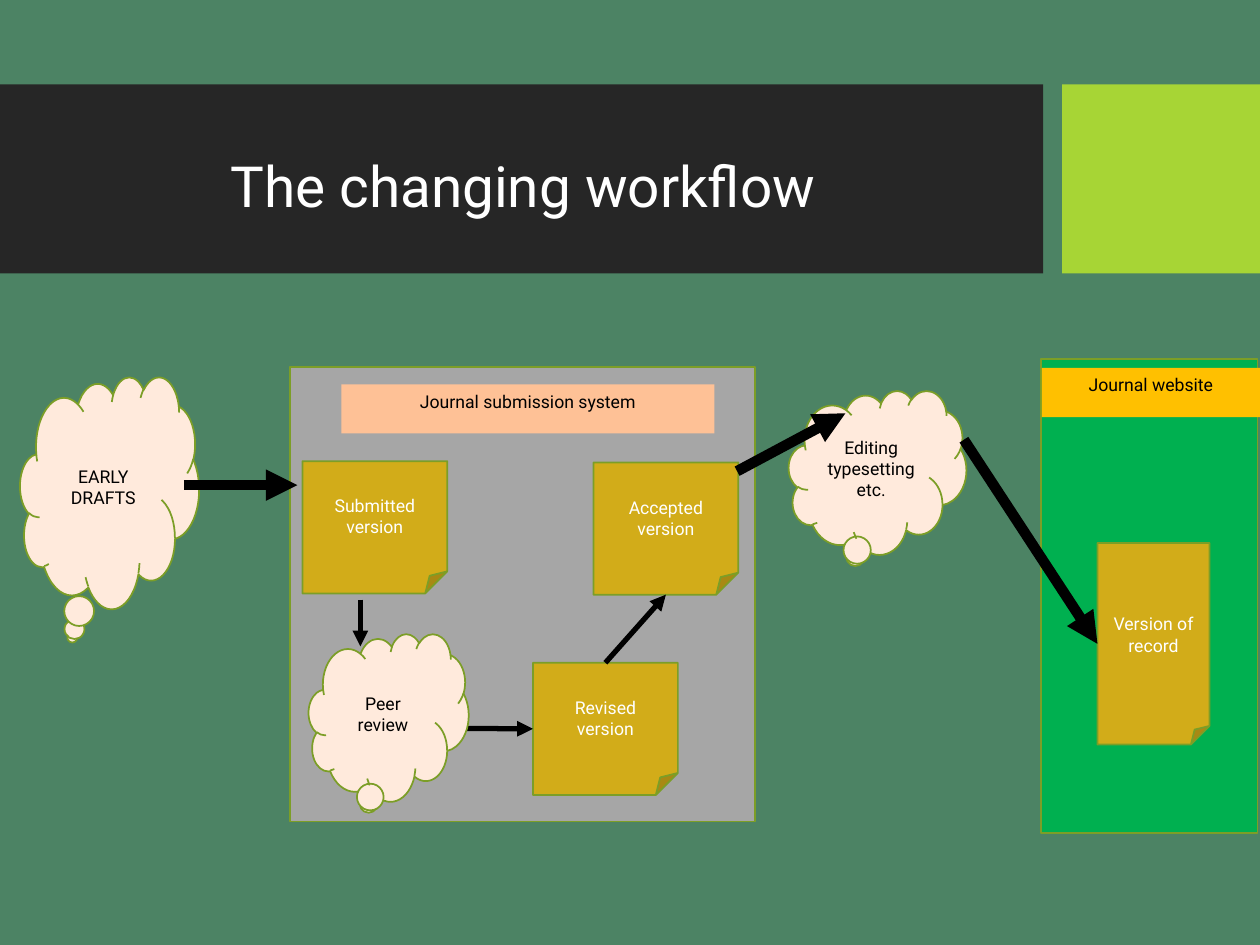
from dataclasses import dataclass

from lxml import etree
from pptx import Presentation
from pptx.dml.color import RGBColor
from pptx.enum import shapes, text
from pptx.oxml.ns import qn
from pptx.util import Inches, Pt

KIND = shapes.MSO_SHAPE
TOP, LEFT, BOTTOM = 0, 1, 2


@dataclass(frozen=True)
class Theme:
    font: str = "Roboto"
    title_size: float = 32.4
    label_size: float = 10.1
    background: str = "4C8364"
    banner: str = "262626"
    accent: str = "A7D535"
    outline: str = "7C9E27"
    cloud: str = "FFEADC"
    note: str = "D2AC19"
    system: str = "A6A6A6"
    system_label: str = "FEC196"
    website: str = "00B050"
    website_label: str = "FFC000"
    light: str = "FFFFFF"
    dark: str = "000000"


THEME = Theme()


def paint(fill, color):
    fill.solid()
    fill.fore_color.rgb = RGBColor.from_string(color)


def write(shape, wording, size, color, align, anchor):
    frame = shape.text_frame
    frame.word_wrap = True
    frame.vertical_anchor = anchor
    frame.text = wording
    para = frame.paragraphs[0]
    para.alignment = align
    font = para.runs[0].font
    font.name, font.size = THEME.font, Pt(size)
    font.color.rgb = RGBColor.from_string(color)


def add_box(slide, kind, area, fill, outlined=False):
    box = slide.shapes.add_shape(kind, *map(Inches, area))
    box.shadow.inherit = False
    paint(box.fill, fill)
    if outlined:
        paint(box.line.fill, THEME.outline)
        box.line.width = Pt(1)
    else:
        box.line.fill.background()
    return box


def add_label(box, wording, color=THEME.dark, anchor=text.MSO_ANCHOR.MIDDLE):
    write(box, wording, THEME.label_size, color, text.PP_ALIGN.CENTER, anchor)


def add_cloud(slide, area, wording, pointer=None):
    """Thought cloud; pointer is the place of its small bubbles."""
    cloud = add_box(slide, KIND.CLOUD_CALLOUT, area, THEME.cloud, True)
    if pointer:
        cloud.adjustments[0], cloud.adjustments[1] = pointer
    add_label(cloud, wording)
    return cloud


def add_note(slide, left, top, wording, width=1.15, height=1.05):
    note = add_box(slide, KIND.FOLDED_CORNER, (left, top, width, height), THEME.note, True)
    add_label(note, wording, THEME.light)
    return note


def add_stage(slide, area, fill, label_area, label_fill, wording):
    """Large outlined panel with a heading strip."""
    add_box(slide, KIND.RECTANGLE, area, fill, True)
    strip = add_box(slide, KIND.RECTANGLE, label_area, label_fill)
    add_label(strip, wording, anchor=text.MSO_ANCHOR.TOP)


def add_arrow(slide, start, end, width, source=None, target=None):
    """source and target are (shape, side) pairs that the ends are joined to."""
    arrow = slide.shapes.add_connector(
        shapes.MSO_CONNECTOR.STRAIGHT, *map(Inches, (*start, *end)))
    if source:
        arrow.begin_connect(*source)
    if target:
        arrow.end_connect(*target)
    paint(arrow.line.fill, THEME.dark)
    arrow.line.width = Pt(width)
    etree.SubElement(arrow.line._get_or_add_ln(), qn("a:tailEnd"), type="triangle")
    etree.SubElement(arrow._element.spPr, qn("a:effectLst"))


def add_header(slide):
    add_box(slide, KIND.RECTANGLE, (0, 0.67, 8.28, 1.5), THEME.banner)
    add_box(slide, KIND.RECTANGLE, (8.43, 0.67, 1.57, 1.5), THEME.accent)
    title = slide.shapes.add_textbox(*map(Inches, (1.73, 1.26, 5.21, 0.49)))
    write(title, "The changing workflow", THEME.title_size, THEME.light,
          text.PP_ALIGN.LEFT, text.MSO_ANCHOR.MIDDLE)
    title.text_frame.paragraphs[0].line_spacing = 0.9


def add_workflow(slide):
    pointer = (-0.122, 0.504)
    editing = add_cloud(slide, (6.26, 3.1, 1.41, 1.3), "Editing typesetting etc.", pointer)
    frame = editing.text_frame
    frame.margin_left = frame.margin_right = Inches(0.03)
    add_cloud(slide, (0.16, 2.99, 1.42, 1.84), "EARLY DRAFTS")

    add_stage(slide, (8.26, 2.85, 1.72, 3.76), THEME.website,
              (8.27, 2.92, 1.73, 0.39), THEME.website_label, "Journal website")
    add_stage(slide, (2.3, 2.91, 3.69, 3.61), THEME.system,
              (2.71, 3.05, 2.96, 0.39), THEME.system_label, "Journal submission system")

    add_note(slide, 2.4, 3.66, "Submitted version")
    revised = add_note(slide, 4.23, 5.26, "Revised version")
    accepted = add_note(slide, 4.71, 3.67, "Accepted version")
    record = add_note(slide, 8.71, 4.31, "Version of record", 0.89, 1.6)

    # The review cloud covers the start of its outgoing arrow.
    add_arrow(slide, (3.54, 5.78), (4.23, 5.78), 3, target=(revised, LEFT))
    add_cloud(slide, (2.45, 5.03, 1.27, 1.33), "Peer review", pointer)

    add_arrow(slide, (4.8, 5.26), (5.29, 4.72), 3, (revised, TOP), (accepted, BOTTOM))
    add_arrow(slide, (2.86, 4.76), (2.86, 5.13), 3)
    add_arrow(slide, (1.46, 3.85), (2.36, 3.85), 6)
    add_arrow(slide, (7.65, 3.49), (8.71, 5.11), 6, target=(record, LEFT))
    add_arrow(slide, (5.85, 3.74), (6.71, 3.28), 6)


def main():
    deck = Presentation()
    deck.slide_width, deck.slide_height = Inches(10), Inches(7.5)
    slide = deck.slides.add_slide(deck.slide_layouts[6])
    paint(slide.background.fill, THEME.background)
    add_header(slide)
    add_workflow(slide)
    deck.save("out.pptx")


if __name__ == "__main__":
    main()
